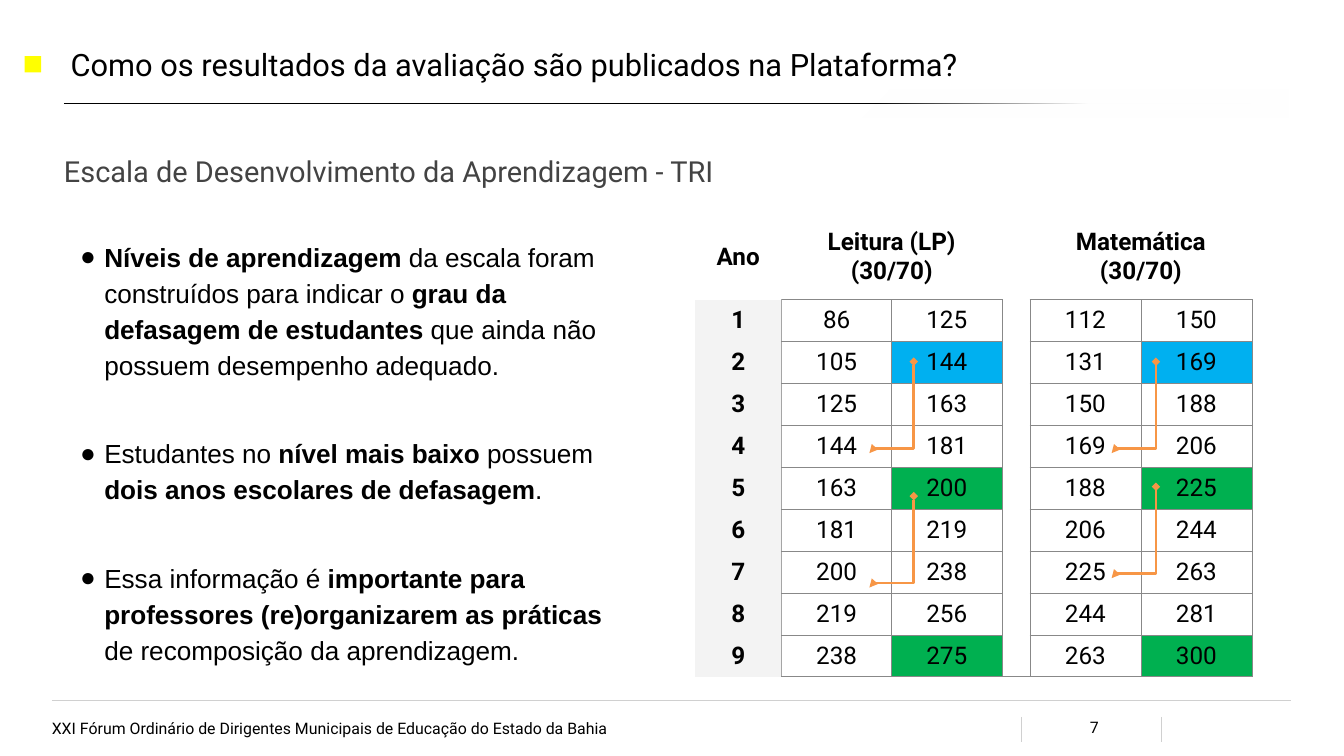
from lxml.etree import SubElement
from pptx import Presentation
from pptx.dml.color import RGBColor
from pptx.enum.shapes import MSO_CONNECTOR as Connector, MSO_SHAPE as Shape
from pptx.enum.text import MSO_ANCHOR as Anchor, MSO_AUTO_SIZE as AutoSize, PP_ALIGN as Align
from pptx.oxml import parse_xml
from pptx.oxml.ns import nsdecls, qn
from pptx.util import Pt

COLORS = {
    "black": "000000", "white": "FFFFFF", "subtitle": "434343", "marker": "FFFF00",
    "rule": "D0D0D0", "year": "F3F3F3", "grid": "888888", "year_grid": "A5A5A5",
    "blue": "00B0F0", "green": "00B050", "arrow": "F79646",
}
NO_GRID_STYLE = "{2D5ABB26-0587-4C30-8999-92F81FD0307C}"

# School year: reading levels (30, 70), mathematics levels (30, 70)
LEVELS = [
    (86, 125, 112, 150), (105, 144, 131, 169), (125, 163, 150, 188),
    (144, 181, 169, 206), (163, 200, 188, 225), (181, 219, 206, 244),
    (200, 238, 225, 263), (219, 256, 244, 281), (238, 275, 263, 300),
]
HIGHLIGHTS = {2: "blue", 5: "green", 9: "green"}

# Each bullet is a list of (text, bold) runs
BULLETS = [
    [("Níveis de aprendizagem", True), (" da escala foram construídos para indicar o ", False),
     ("grau da defasagem de estudantes", True),
     (" que ainda não possuem desempenho adequado.", False)],
    [("Estudantes no ", False), ("nível mais baixo", True), (" possuem ", False),
     ("dois anos escolares de defasagem", True), (".", False)],
    [("Essa informação é ", False),
     ("importante para professores (re)organizarem as práticas ", True),
     ("de recomposição da aprendizagem.", False)],
]


def rgb(name):
    return RGBColor.from_string(COLORS[name])


def place(shape, box):
    shape.left, shape.top, shape.width, shape.height = map(Pt, box)


def set_frame(frame, margins, anchor=Anchor.TOP):
    frame.word_wrap = True
    frame.auto_size = AutoSize.NONE
    frame.vertical_anchor = anchor
    (frame.margin_left, frame.margin_top,
     frame.margin_right, frame.margin_bottom) = map(Pt, margins)


def set_font(paragraph, size, color="black", name="Roboto", bold=False):
    font = paragraph.font
    font.name, font.size, font.bold = name, Pt(size), bold
    font.color.rgb = rgb(color)


def set_bullet(paragraph, char=None, indent=0, hanging=0):
    properties = paragraph._p.get_or_add_pPr()
    properties.set("marL", str(Pt(indent)))
    properties.set("indent", str(Pt(-hanging)))
    if char is None:
        SubElement(properties, qn("a:buNone"))
        return
    color = SubElement(properties, qn("a:buClr"))
    SubElement(color, qn("a:srgbClr"), val=COLORS["black"])
    SubElement(properties, qn("a:buChar"), char=char)


def add_line(slide, kind, start, end, color, width):
    line = slide.shapes.add_connector(kind, *map(Pt, (*start, *end)))
    line.line.color.rgb = rgb(color)
    line.line.width = Pt(width)
    SubElement(line._element.spPr, qn("a:effectLst"))
    return line


def add_rectangle(slide, box, color):
    shape = slide.shapes.add_shape(Shape.RECTANGLE, *map(Pt, box))
    shape.shadow.inherit = False
    shape.line.fill.background()
    shape.fill.solid()
    shape.fill.fore_color.rgb = rgb(color)
    return shape


def add_heading(slide, box):
    left, top, width, height = box
    # Underline, fading out to the right
    add_line(slide, Connector.STRAIGHT, (left, top + 65.5), (left + 1272, top + 65.5), "black", 0.75)
    fade = add_rectangle(slide, (left + 834.5, top + 50.5, 477.5, 30), "white")
    stops = "".join(
        f'<a:gs pos="{position}"><a:srgbClr val="{COLORS["white"]}">'
        f'<a:alpha val="{alpha}"/></a:srgbClr></a:gs>'
        for position, alpha in ((0, 0), (10000, 0), (55000, 100000), (100000, 100000)))
    solid = fade._element.spPr.find(qn("a:solidFill"))
    solid.getparent().replace(solid, parse_xml(
        f'<a:gradFill {nsdecls("a")}><a:gsLst>{stops}</a:gsLst><a:lin ang="2700000"/></a:gradFill>'))
    add_rectangle(slide, (left - 42, top + 14.5, 17.5, 17.5), "marker")

    title = slide.shapes.title
    place(title, box)
    set_frame(title.text_frame, (7.2, 3.6, 7.2, 3.6))
    title.text = "Como os resultados da avaliação são publicados na Plataforma?"
    paragraph = title.text_frame.paragraphs[0]
    paragraph.alignment = Align.LEFT
    set_font(paragraph, 33)


def add_subtitle(slide, box):
    body = slide.placeholders[1]
    place(body, box)
    set_frame(body.text_frame, (0, 0, 0, 0))
    body.text = "Escala de Desenvolvimento da Aprendizagem - TRI"
    paragraph = body.text_frame.paragraphs[0]
    set_bullet(paragraph)
    paragraph.line_spacing = 1.5
    paragraph.space_before = Pt(0)
    set_font(paragraph, 31, "subtitle")


def add_bullets(slide, box):
    body = slide.placeholders[2]
    place(body, box)
    frame = body.text_frame
    set_frame(frame, (7.2, 16.6, 7.2, 7.2), Anchor.MIDDLE)
    for index, runs in enumerate(BULLETS):
        paragraph = frame.add_paragraph() if index else frame.paragraphs[0]
        set_bullet(paragraph, "●", 36, 26)
        paragraph.line_spacing = 1.15
        paragraph.space_before = Pt(56 if index else 0)
        set_font(paragraph, 28, name="Arial")
        for text, bold in runs:
            run = paragraph.add_run()
            run.text = text
            run.font.bold = bold


def format_cell(cell, text="", bold=False, fill=None, borders=None):
    cell.vertical_anchor = Anchor.MIDDLE
    cell.margin_left = cell.margin_right = cell.margin_top = cell.margin_bottom = Pt(7.2)
    cell.text = text
    for paragraph in cell.text_frame.paragraphs:
        paragraph.alignment = Align.CENTER
        set_font(paragraph, 26, bold=bold)
    properties = cell._tc.get_or_add_tcPr()
    for side in "LRTB":
        if side in (borders or {}):
            line = SubElement(properties, qn(f"a:ln{side}"), w=str(Pt(0.75)))
            solid = SubElement(line, qn("a:solidFill"))
            SubElement(solid, qn("a:srgbClr"), val=COLORS[borders[side]])
    if fill:
        cell.fill.solid()
        cell.fill.fore_color.rgb = rgb(fill)
    else:
        cell.fill.background()


def add_levels_table(slide, box):
    table = slide.shapes.add_table(len(LEVELS) + 1, 6, *map(Pt, box)).table
    table.first_row = table.horz_banding = False
    table._tbl.tblPr.find(qn("a:tableStyleId")).text = NO_GRID_STYLE
    for column, width in zip(table.columns, (93, 118, 118, 30, 119, 119)):
        column.width = Pt(width)
    for index, row in enumerate(table.rows):
        row.height = Pt(44 if index else 91.5)

    # Header
    headers = ("Ano", "Leitura (LP)\n(30/70)", "", "", "Matemática\n(30/70)", "")
    for column, text in enumerate(headers):
        borders = {} if column in (0, 3) else {"B": "grid"}
        format_cell(table.cell(0, column), text, True, borders=borders)
    for column in (1, 4):
        table.cell(0, column).merge(table.cell(0, column + 1))

    # One row for each school year
    for year, levels in enumerate(LEVELS, 1):
        format_cell(table.cell(year, 0), str(year), True, "year", {"R": "year_grid"})
        gutter = "LRB" if year == len(LEVELS) else "LR"
        format_cell(table.cell(year, 3), borders=dict.fromkeys(gutter, "grid"))
        for column, level in zip((1, 2, 4, 5), levels):
            borders = dict.fromkeys("LRTB", "grid")
            if column == 1:
                borders["L"] = "year_grid"
            fill = HIGHLIGHTS.get(year) if column in (2, 5) else None
            format_cell(table.cell(year, column), str(level), fill=fill, borders=borders)


def add_level_arrow(slide, box):
    """Elbow from the top right of the box to its bottom left."""
    left, top, width, height = box
    # A quarter turn about the centre swaps the two sides
    x, y = left + (width - height) / 2, top + (height - width) / 2
    arrow = add_line(slide, Connector.ELBOW, (x, y), (x + height, y + width), "arrow", 3)
    properties = arrow._element.spPr
    properties.find(qn("a:xfrm")).set("rot", "5400000")
    adjustments = properties.find(qn("a:prstGeom")).get_or_add_avLst()
    SubElement(adjustments, qn("a:gd"), name="adj1", fmla="val 95100")
    line = arrow.line._get_or_add_ln()
    SubElement(line, qn("a:headEnd"), type="diamond")
    SubElement(line, qn("a:tailEnd"), type="triangle")


def add_footer(slide, box):
    left, top, width, height = box
    add_line(slide, Connector.STRAIGHT, (left, top), (left + width, top), "rule", 1)
    for x in (left + 1038.5, left + 1189):
        add_line(slide, Connector.STRAIGHT, (x, top + 17), (x, top + 44.5), "rule", 0.75)
    event = "XXI Fórum Ordinário de Dirigentes Municipais de Educação do Estado da Bahia"
    for text, text_box, margins, alignment in (
            (event, (left, top + 15, 842, 27.5), (0, 0, 0, 0), Align.LEFT),
            ("7", (left + 1089.5, top + 7, 55, 43), (10.8, 5, 10.8, 5), Align.CENTER)):
        label = slide.shapes.add_textbox(*map(Pt, text_box))
        set_frame(label.text_frame, margins, Anchor.MIDDLE)
        label.text_frame.text = text
        paragraph = label.text_frame.paragraphs[0]
        paragraph.alignment = alignment
        set_font(paragraph, 17)


def main():
    presentation = Presentation()
    presentation.slide_width, presentation.slide_height = Pt(1440), Pt(810)
    slide = presentation.slides.add_slide(presentation.slide_layouts[3])
    for placeholder in list(slide.placeholders):
        if placeholder.placeholder_format.idx > 2:
            placeholder._element.getparent().remove(placeholder._element)
    add_footer(slide, (55.5, 751, 1328, 59))
    add_heading(slide, (68.5, 45.5, 1263.5, 57))
    add_subtitle(slide, (68.5, 146, 1251.5, 57))
    add_bullets(slide, (68.5, 213, 594, 531))
    add_levels_table(slide, (744.5, 229.5, 597, 487.5))
    for left, top in ((931.5, 387.5), (931.5, 531.5), (1191, 387.5), (1191, 521.5)):
        add_level_arrow(slide, (left, top, 47.5, 98))
    presentation.save("out.pptx")


if __name__ == "__main__":
    main()
